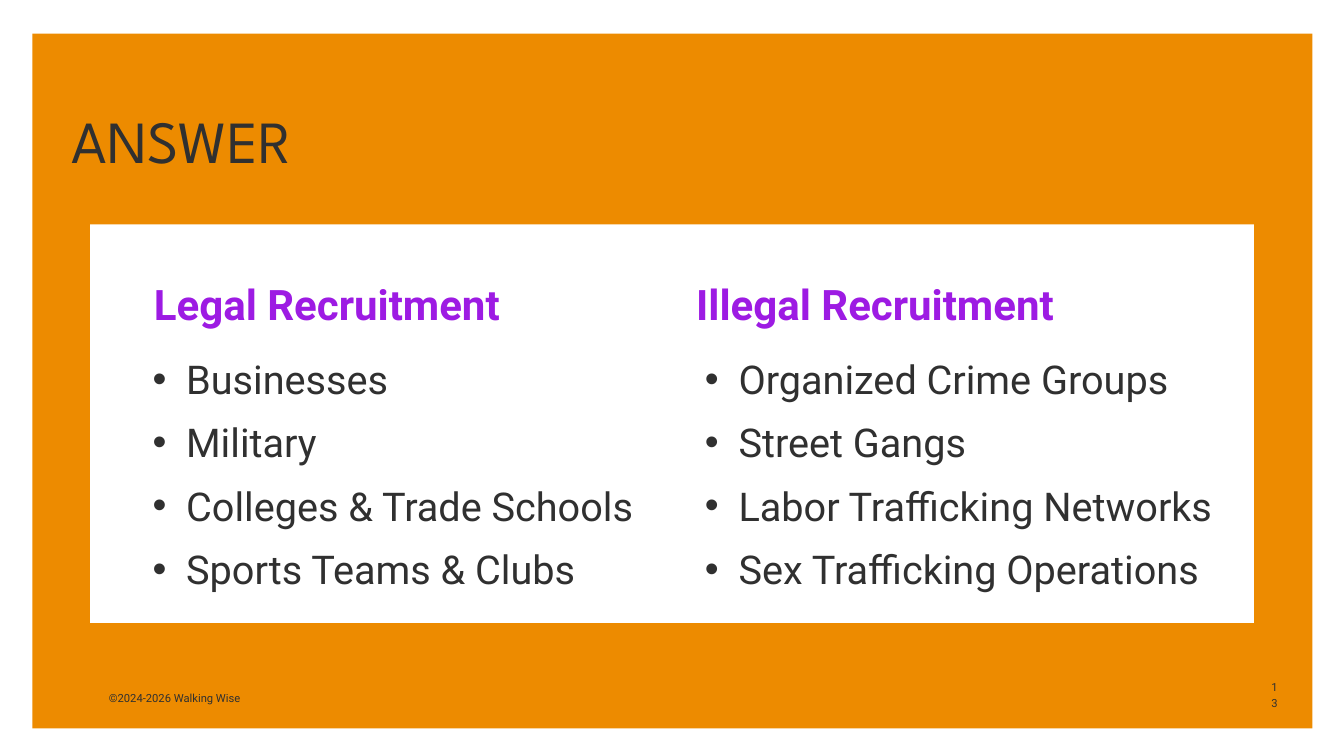
"""Build the answer slide comparing legal and illegal recruitment."""
from pptx import Presentation, util as u
from pptx.dml.color import RGBColor
from pptx.enum import shapes, text
from pptx.oxml import parse_xml
from pptx.oxml.ns import nsdecls

ORANGE = RGBColor(0xED, 0x8B, 0x00)
WHITE = RGBColor(0xFF, 0xFF, 0xFF)
DARK = RGBColor(0x30, 0x30, 0x30)
PURPLE = RGBColor(0x9D, 0x1B, 0xE3)

TITLE = "ANSWER"
COPYRIGHT = "©2024-2026 Walking Wise"
PAGE_NUMBER = "13"
COLUMNS = [
    {"heading": "Legal Recruitment", "heading_left": 2.29,
     "list_left": 1.77, "list_width": 7.79,
     "items": ["Businesses", "Military", "Colleges & Trade Schools",
               "Sports Teams & Clubs"]},
    {"heading": "Illegal Recruitment", "heading_left": 10.36,
     "list_left": 9.99, "list_width": 8.78,
     "items": ["Organized Crime Groups", "Street Gangs",
               "Labor Trafficking Networks", "Sex Trafficking Operations"]},
]
PANELS = [((0.48, 0.5, 19.05, 10.34), ORANGE),
          ((1.34, 3.34, 17.32, 5.93), WHITE)]


def place(shape, box):
    shape.left, shape.top, shape.width, shape.height = map(u.Inches, box)


def write(shape, lines, box, *, size, spacing, font="Roboto", color=DARK,
          bold=False, align=text.PP_ALIGN.LEFT, bullet=False):
    place(shape, box)
    frame = shape.text_frame
    frame.margin_left = frame.margin_top = 0
    frame.margin_right = frame.margin_bottom = 0
    frame.word_wrap = True
    frame.auto_size = text.MSO_AUTO_SIZE.NONE
    frame.vertical_anchor = text.MSO_ANCHOR.TOP
    frame.text = "\n".join(lines)
    for paragraph in frame.paragraphs:
        paragraph.alignment = align
        paragraph.line_spacing = u.Pt(spacing)
        paragraph.space_before = paragraph.space_after = u.Pt(0)
        if bullet:
            paragraph.level = 1
            properties = paragraph._p.get_or_add_pPr()
            properties.set("marL", str(u.Inches(1)))
            properties.set("indent", str(u.Inches(-0.5)))
            properties.append(parse_xml(f'<a:buFont {nsdecls("a")} typeface="Arial"/>'))
            properties.append(parse_xml(f'<a:buChar {nsdecls("a")} char="•"/>'))
        for run in paragraph.runs:
            run.font.name = font
            run.font.size = u.Pt(size)
            run.font.bold = bold
            run.font.color.rgb = color


def main():
    deck = Presentation()
    deck.slide_width, deck.slide_height = u.Inches(20), u.Inches(11.25)
    slide = deck.slides.add_slide(deck.slide_layouts.get_by_name("Comparison"))
    title = slide.shapes.title

    for box, color in PANELS:
        panel = slide.shapes.add_shape(shapes.MSO_SHAPE.RECTANGLE, *map(u.Inches, box))
        panel.shadow.inherit = False
        panel.fill.solid()
        panel.fill.fore_color.rgb = color
        panel.line.fill.background()
        title.element.addprevious(panel.element)

    write(title, [TITLE], (1.07, 1.37, 10, 1.2), size=64, spacing=89.6,
          font="League Spartan")
    for index, column in enumerate(COLUMNS):
        heading = slide.placeholders[1 + 2 * index]
        items = slide.placeholders[2 + 2 * index]
        write(heading, [column["heading"]], (column["heading_left"], 4.02, 5.89, 0.84),
              size=45, spacing=63, color=PURPLE, bold=True)
        write(items, column["items"], (column["list_left"], 5.04, column["list_width"], 3.7),
              size=42.5, spacing=68, bullet=True)

    for words, box, align in [
        (COPYRIGHT, (1.62, 10.25, 2.58, 0.23), text.PP_ALIGN.LEFT),
        (PAGE_NUMBER, (18.88, 10.09, 0.17, 0.2), text.PP_ALIGN.CENTER),
    ]:
        write(slide.shapes.add_textbox(0, 0, 0, 0), [words], box,
              size=12, spacing=16.8, align=align)

    deck.save("out.pptx")


if __name__ == "__main__":
    main()
